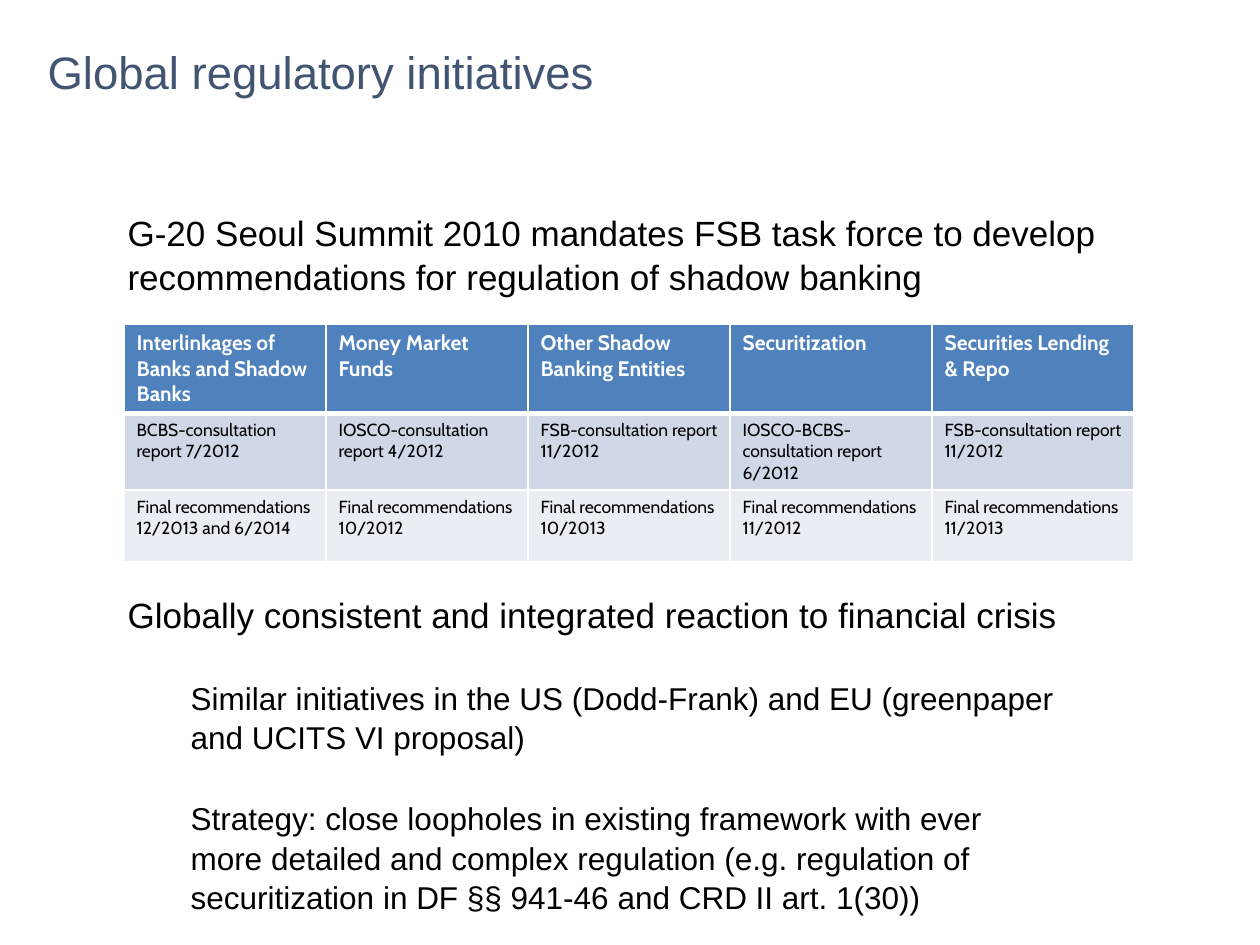
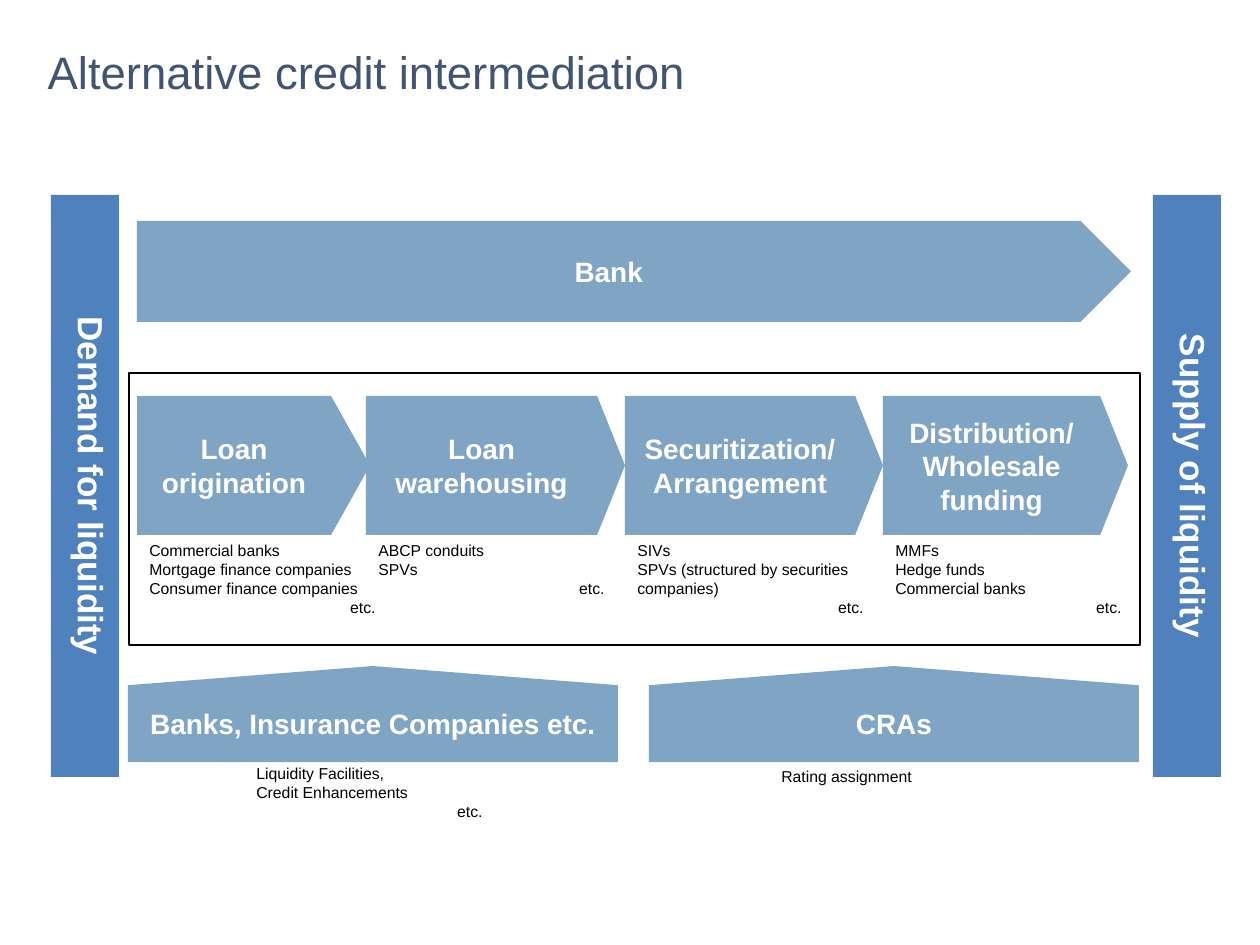
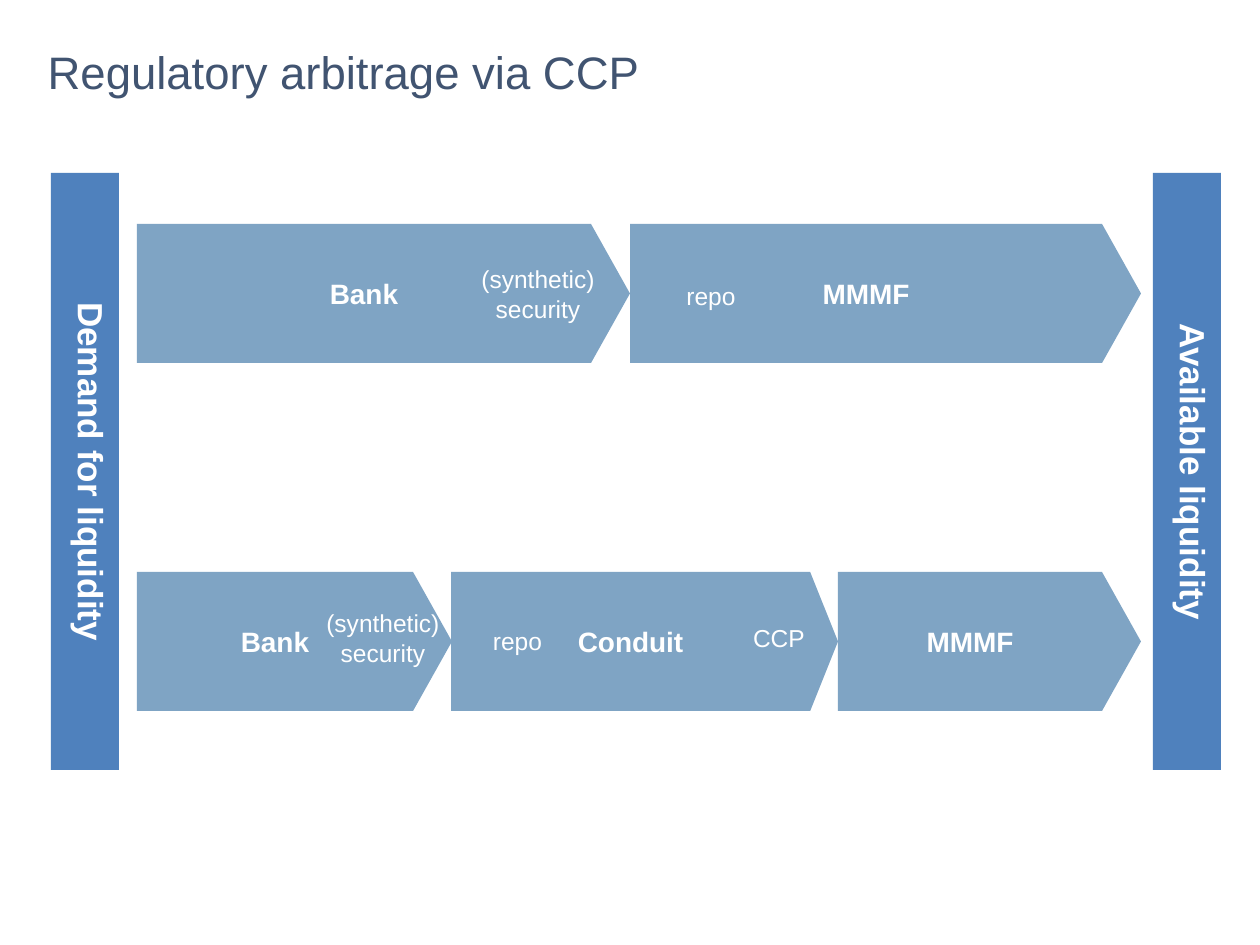
from pptx import Presentation
from pptx.dml.color import RGBColor
from pptx.enum.shapes import MSO_SHAPE
from pptx.enum.text import MSO_ANCHOR, MSO_AUTO_SIZE, PP_ALIGN
from pptx.oxml import parse_xml
from pptx.oxml.ns import nsdecls
from pptx.util import Emu, Pt

ARROW, RECT = MSO_SHAPE.RIGHT_ARROW, MSO_SHAPE.RECTANGLE
TOP, MID = MSO_ANCHOR.TOP, MSO_ANCHOR.MIDDLE
LEFT, MIDST, RIGHT = PP_ALIGN.LEFT, PP_ALIGN.CENTER, PP_ALIGN.RIGHT

NAVY, BLUE, STEEL = "415471", "4F81BD", "7FA4C4"
WHITE, BLACK = "FFFFFF", "000000"
SCALE = 914400 / 126

BODY = [
    (0, 20, 0, "G-20 Seoul Summit 2010 mandates FSB task force to develop "
     "recommendations for regulation of shadow banking"),
    (0, 20, 168, "Globally consistent and integrated reaction to financial crisis"),
    (1, 18, 24, "Similar initiatives in the US (Dodd-Frank) and EU (greenpaper "
     "and UCITS VI proposal)"),
    (1, 18, 24, "Strategy: close loopholes in existing framework with ever\n"
     "more detailed and complex regulation (e.g. regulation of "
     "securitization in DF §§ 941-46 and CRD II art. 1(30))"),
]
TABLE = [
    ["Interlinkages of Banks and Shadow Banks", "Money Market Funds",
     "Other Shadow Banking Entities", "Securitization",
     "Securities Lending & Repo"],
    ["BCBS-consultation report 7/2012", "IOSCO-consultation report 4/2012",
     "FSB-consultation report 11/2012", "IOSCO-BCBS-consultation report 6/2012",
     "FSB-consultation report 11/2012"],
    ["Final recommendations " + date for date in
     ("12/2013 and 6/2014", "10/2012", "10/2013", "11/2012", "11/2013")],
]
ROWS = [
    (88, BLUE, WHITE, 12, True, 3),
    (76, "D0D8E8", BLACK, 10, False, 1),
    (72, "E9EDF4", BLACK, 10, False, 1),
]
STEPS = [
    (137, 233, 0.28, ["Loan", "origination"],
     ["Commercial banks", "Mortgage finance companies",
      "Consumer finance companies", "etc."]),
    (366, 259, 0.2, ["Loan", "warehousing"], ["ABCP conduits", "SPVs", "etc."]),
    (625, 258, 0.2, ["Securitization/Arrangement"],
     ["SIVs", "SPVs (structured by securities companies)", "etc."]),
    (883, 245, 0.2, ["Distribution/", "Wholesale", "funding"],
     ["MMFs", "Hedge funds", "Commercial banks", "etc."]),
]
HELP = [
    (128, "Banks, Insurance Companies etc.", 244, 758,
     ["Liquidity Facilities,", "Credit Enhancements", "etc."]),
    (649, "CRAs", 769, 761, ["Rating assignment"]),
]
CHAINS = [
    (224, [(137, 493, 0.28, "Bank"), (630, 511, 0.28, "MMMF")]),
    (572, [(137, 315, 0.28, "Bank"), (451, 387, 0.2, "Conduit"),
           (838, 303, 0.28, "MMMF")]),
]
TAGS = [
    (432, 620, 171, 43, "repo"),
    (678, 617, 202, 43, "CCP"),
    (612, 275, 198, 43, "repo"),
    (281, 602, 204, 72, "(synthetic) security"),
    (439, 258, 198, 72, "(synthetic) security"),
]


def px(*nums):
    return [Emu(round(n * SCALE)) for n in nums]


def rgb(code):
    return RGBColor.from_string(code)


def add_run(para, text, size, tint, bold=False, face="Arial"):
    run = para.add_run()
    run.text = text
    font = run.font
    font.name, font.size, font.bold = face, Pt(size), bold
    font.color.rgb = rgb(tint)


def write(frame, lines, size, tint, bold=False, align=MIDST):
    frame.word_wrap = True
    for i, line in enumerate(lines):
        para = frame.paragraphs[0] if i == 0 else frame.add_paragraph()
        para.alignment = RIGHT if line == "etc." else align
        add_run(para, line, size, tint, bold)


def place(shape, *box):
    shape.left, shape.top, shape.width, shape.height = px(*box)


def start(deck, title):
    slide = deck.slides.add_slide(deck.slide_layouts[0])
    head, sub = slide.placeholders
    place(head, 35, 36, 1191, 70)
    frame = head.text_frame
    frame.auto_size = MSO_AUTO_SIZE.NONE
    frame.vertical_anchor = MID
    write(frame, [title], 26, NAVY, align=LEFT)
    return slide, sub


def start_flow(deck, title, top, high, ends):
    slide, sub = start(deck, title)
    sub.element.getparent().remove(sub.element)
    for x, text in zip((51, 1153), ends):
        bar = add_box(slide, RECT, (x, top, 68, high), BLUE)
        bar.element.txBody.bodyPr.set("vert", "vert")
        bar.text_frame.vertical_anchor = TOP
        write(bar.text_frame, [text], 20, WHITE, True)
    return slide


def add_box(slide, kind, box, fill):
    shape = slide.shapes.add_shape(kind, *px(*box))
    shape.shadow.inherit = False
    shape.fill.solid()
    shape.fill.fore_color.rgb = rgb(fill)
    shape.line.fill.background()
    return shape


def add_arrow(slide, box, tip, lines):
    arrow = add_box(slide, ARROW, box, STEEL)
    arrow.adjustments[0], arrow.adjustments[1] = 1, tip
    arrow.text_frame.vertical_anchor = MID
    write(arrow.text_frame, lines, 16, WHITE, True)
    return arrow


def add_up(slide, x, y, wide, high, text):
    shift = (wide - high) / 2
    arrow = add_arrow(slide, (x + shift, y - shift, high, wide), 0.2, [text])
    arrow.rotation = 270
    arrow.element.txBody.bodyPr.set("vert", "vert")


def add_text(slide, box, lines, size, tint, align):
    shape = slide.shapes.add_textbox(*px(*box))
    write(shape.text_frame, lines, size, tint, align=align)


def add_note(slide, x, y, lines):
    add_text(slide, (x, y, 251, 13 + 19 * len(lines)), lines, 9, BLACK, LEFT)


def edge(cell, side, width):
    cell._tc.get_or_add_tcPr().append(parse_xml(
        f'<a:ln{side} {nsdecls("a")} w="{Pt(width)}"><a:solidFill>'
        f'<a:srgbClr val="{WHITE}"/></a:solidFill></a:ln{side}>'))


def add_grid(slide):
    wide = 202
    cols = len(TABLE[0])
    high = sum(row[0] for row in ROWS)
    grid = slide.shapes.add_table(
        len(TABLE), cols, *px(124, 324, wide * cols, high)).table
    for col in grid.columns:
        col.width = px(wide)[0]
    above = 1
    for r, (tall, fill, tint, size, bold, base) in enumerate(ROWS):
        grid.rows[r].height = px(tall)[0]
        for c, text in enumerate(TABLE[r]):
            cell = grid.cell(r, c)
            for side, width in zip("LRTB", (1, 1, above, base)):
                edge(cell, side, width)
            cell.fill.solid()
            cell.fill.fore_color.rgb = rgb(fill)
            add_run(cell.text_frame.paragraphs[0], text, size, tint, bold, "Cabin")
        above = base


def draw_rules(deck):
    slide, sub = start(deck, "Global regulatory initiatives")
    place(sub, 115, 204, 1012, 515)
    frame = sub.text_frame
    frame.auto_size = MSO_AUTO_SIZE.NONE
    frame.vertical_anchor = TOP
    for i, (level, size, gap, text) in enumerate(BODY):
        para = frame.paragraphs[0] if i == 0 else frame.add_paragraph()
        para.level, para.alignment = level, LEFT
        para.line_spacing, para.space_before = 1.04, Pt(gap)
        for j, part in enumerate(text.split("\n")):
            if j:
                para.add_line_break()
            add_run(para, part, size, BLACK)
    add_grid(slide)


def draw_credit(deck):
    slide = start_flow(deck, "Alternative credit intermediation", 195, 582,
                       ("Demand for liquidity", "Supply of liquidity"))
    add_arrow(slide, (137, 221, 994, 101), 0.5, ["Bank"])
    for x, wide, tip, lines, note in STEPS:
        add_arrow(slide, (x, 396, wide, 139), tip, lines)
        add_note(slide, x, 535, note)
    frame = add_box(slide, RECT, (129, 373, 1011, 272), WHITE)
    frame.fill.background()
    frame.line.color.rgb = rgb(BLACK)
    frame.line.width = Pt(1.5)
    for x, text, left, top, note in HELP:
        add_up(slide, x, 666, 490, 96, text)
        add_note(slide, left, top, note)


def draw_ccp(deck):
    slide = start_flow(deck, "Regulatory arbitrage via CCP", 173, 597,
                       ("Demand for liquidity", "Available liquidity"))
    for y, chain in CHAINS:
        for x, wide, tip, text in chain:
            add_arrow(slide, (x, y, wide, 139), tip, [text])
    for *box, text in TAGS:
        add_text(slide, box, [text], 14, WHITE, MIDST)


def main():
    deck = Presentation()
    deck.slide_width, deck.slide_height = px(1260, 945)
    draw_rules(deck)
    draw_credit(deck)
    draw_ccp(deck)
    deck.save("out.pptx")


if __name__ == "__main__":
    main()
